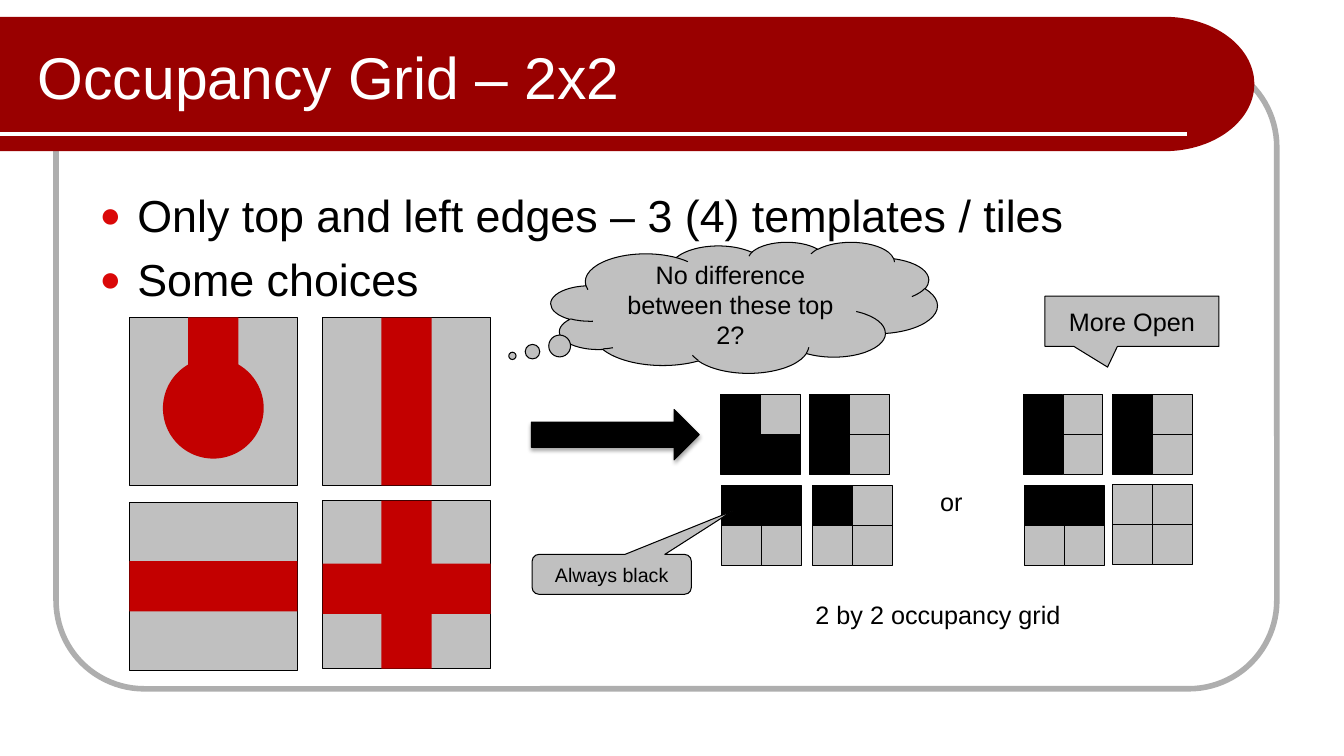
import math
from dataclasses import dataclass

import lxml.etree
import pptx
import pptx.dml.color
import pptx.enum.shapes
import pptx.enum.text
import pptx.oxml
import pptx.oxml.ns
import pptx.util

Preset = pptx.enum.shapes.MSO_SHAPE
Anchor = pptx.enum.text.MSO_ANCHOR
Align = pptx.enum.text.PP_ALIGN

WIDTH, HEIGHT = pptx.util.Inches(13.333), pptx.util.Inches(7.5)
COLUMNS, ROWS = 160, 90
BLACK, WHITE, GRAY, RED = "000000", "FFFFFF", "C0C0C0", "C30000"
BANNER_RED, FRAME_GRAY, BULLET_RED = "990000", "AEAEAE", "DA0808"
TILE, CORRIDOR, CELL = 20, 6, 4.75
DRAWING = 'xmlns:a="http://schemas.openxmlformats.org/drawingml/2006/main"'


@dataclass(frozen=True)
class Box:
    """A rectangle in grid columns and rows."""
    left: float
    top: float
    width: float
    height: float


@dataclass(frozen=True)
class Tile:
    left: float
    top: float
    openings: tuple[tuple[Preset, Box], ...]


@dataclass(frozen=True)
class Occupancy:
    """A 2 by 2 grid; cells run row by row, X marks a black one."""
    left: float
    top: float
    cells: str


@dataclass(frozen=True)
class Callout:
    preset: Preset
    box: Box
    adjustments: tuple[float, ...]
    text: str
    size: int


UPRIGHT = Box((TILE - CORRIDOR) / 2, 0, CORRIDOR, TILE)
TILES = (
    Tile(15.4, 37.8, ((Preset.RECTANGLE, Box(7, 0, CORRIDOR, 13)),
                      (Preset.OVAL, Box(4, 4.8, 12, 12)))),
    Tile(38.4, 37.8, ((Preset.RECTANGLE, UPRIGHT),)),
    Tile(15.4, 59.8, ((Preset.RECTANGLE, Box(0, 7, TILE, CORRIDOR)),)),
    Tile(38.4, 59.6, ((Preset.RECTANGLE, UPRIGHT),
                      (Preset.RECTANGLE, Box(0, 7.5, TILE, CORRIDOR)))),
)
OCCUPANCIES = (
    Occupancy(85.8, 47, "X.XX"),
    Occupancy(96.35, 47, "X.X."),
    Occupancy(85.9, 57.85, "XX.."),
    Occupancy(96.7, 57.85, "X..."),
    Occupancy(121.8, 47, "X.X."),
    Occupancy(132.45, 47, "X.X."),
    Occupancy(121.95, 57.85, "XX.."),
    Occupancy(132.45, 57.7, "...."),
)
CALLOUTS = (
    Callout(Preset.RECTANGULAR_CALLOUT, Box(124.4, 35.25, 20.7, 6),
            (-0.14, 0.91), "More Open", 18),
    Callout(Preset.ROUNDED_RECTANGULAR_CALLOUT, Box(63.35, 66, 18.95, 4.75),
            (0.76, -1.59, 0.17), "Always black", 14),
    Callout(Preset.CLOUD_CALLOUT, Box(65.6, 28.8, 46, 15.6),
            (-0.6, 0.37), "No difference between these top 2?", 18),
)


def column(number: float) -> int:
    return round(WIDTH * number / COLUMNS)


def row(number: float) -> int:
    return round(HEIGHT * number / ROWS)


def place(box: Box) -> tuple[int, int, int, int]:
    return column(box.left), row(box.top), column(box.width), row(box.height)


def color(value: str) -> pptx.dml.color.RGBColor:
    return pptx.dml.color.RGBColor.from_string(value)


def paint(shape, fill: str | None, line: str | None, width: float = 0.75) -> None:
    shape.shadow.inherit = False
    if fill:
        shape.fill.solid()
        shape.fill.fore_color.rgb = color(fill)
    else:
        shape.fill.background()
    if line:
        shape.line.color.rgb = color(line)
        shape.line.width = pptx.util.Pt(width)
    else:
        shape.line.fill.background()


def add_preset(slide, preset: Preset, box: Box, fill: str | None,
               line: str | None = None, width: float = 0.75):
    shape = slide.shapes.add_shape(preset, *place(box))
    paint(shape, fill, line, width)
    return shape


def add_run(paragraph, text: str, size: float, ink: str = BLACK) -> None:
    run = paragraph.add_run()
    run.text = text
    run.font.name = "Arial"
    run.font.size = pptx.util.Pt(size)
    run.font.color.rgb = color(ink)


def add_label(slide, box: Box, text: str, size: float, ink: str = BLACK,
              wrap: bool = True) -> None:
    frame = slide.shapes.add_textbox(*place(box)).text_frame
    frame.word_wrap = wrap
    frame.vertical_anchor = Anchor.MIDDLE
    add_run(frame.paragraphs[0], text, size, ink)


def add_banner(slide) -> None:
    """Frame, red band with a rounded right end, and the white rule."""
    border = add_preset(slide, Preset.ROUNDED_RECTANGLE,
                        Box(6.67, 7, 145.33, 75), None, FRAME_GRAY, 4)
    border.adjustments[0] = 0.14
    angles = [math.radians(degrees) for degrees in range(-90, 91, 3)]
    curve = [(column(138.63 + 10.7 * math.cos(angle)), row(10 + 8 * math.sin(angle)))
             for angle in angles]
    builder = slide.shapes.build_freeform(0, row(2))
    builder.add_line_segments(curve + [(0, row(18))], close=True)
    paint(builder.convert_to_shape(), BANNER_RED, None)
    rule = slide.shapes.add_connector(pptx.enum.shapes.MSO_CONNECTOR.STRAIGHT,
                                      0, row(16), column(141.33), row(16))
    rule.line.color.rgb = color(WHITE)
    rule.line.width = pptx.util.Pt(3)
    lxml.etree.SubElement(rule._element.spPr, pptx.oxml.ns.qn("a:effectLst"))


def add_bullets(slide, box: Box, lines: tuple[str, ...]) -> None:
    frame = slide.shapes.add_textbox(*place(box)).text_frame
    frame.word_wrap = True
    for index, text in enumerate(lines):
        paragraph = frame.add_paragraph() if index else frame.paragraphs[0]
        properties = paragraph._p.get_or_add_pPr()
        properties.set("marL", str(column(4.5)))
        properties.set("indent", str(-column(4.5)))
        if index:
            paragraph.space_before = pptx.util.Pt(7.2)
        for bullet in (f'<a:buClr {DRAWING}><a:srgbClr val="{BULLET_RED}"/></a:buClr>',
                       f'<a:buSzPct {DRAWING} val="80000"/>',
                       f'<a:buFont {DRAWING} typeface="Arial"/>',
                       f'<a:buChar {DRAWING} char="●"/>'):
            properties.append(pptx.oxml.parse_xml(bullet))
        add_run(paragraph, text, 32)


def add_tile(slide, tile: Tile) -> None:
    add_preset(slide, Preset.RECTANGLE, Box(tile.left, tile.top, TILE, TILE), GRAY, BLACK)
    for preset, opening in tile.openings:
        add_preset(slide, preset, Box(tile.left + opening.left, tile.top + opening.top,
                                      opening.width, opening.height), RED)


def add_occupancy(slide, occupancy: Occupancy) -> None:
    for index, mark in enumerate(occupancy.cells):
        down, across = divmod(index, 2)
        box = Box(occupancy.left + across * CELL, occupancy.top + down * CELL, CELL, CELL)
        add_preset(slide, Preset.RECTANGLE, box, BLACK if mark == "X" else GRAY, BLACK)


def add_arrow(slide) -> None:
    arrow = add_preset(slide, Preset.RIGHT_ARROW, Box(63.25, 48.75, 20, 6), BLACK, BLACK)
    effects = arrow._element.spPr.find(pptx.oxml.ns.qn("a:effectLst"))
    effects.append(pptx.oxml.parse_xml(
        f'<a:outerShdw {DRAWING} blurRad="{pptx.util.Pt(3.1)}" dist="{pptx.util.Pt(1.8)}" '
        'dir="5400000" rotWithShape="0"><a:srgbClr val="000000">'
        '<a:alpha val="35000"/></a:srgbClr></a:outerShdw>'))


def add_callout(slide, callout: Callout) -> None:
    shape = add_preset(slide, callout.preset, callout.box, GRAY, BLACK)
    for index, value in enumerate(callout.adjustments):
        shape.adjustments[index] = value
    shape.text_frame.word_wrap = True
    shape.text_frame.vertical_anchor = Anchor.MIDDLE
    paragraph = shape.text_frame.paragraphs[0]
    paragraph.alignment = Align.CENTER
    add_run(paragraph, callout.text, callout.size)


def main() -> None:
    presentation = pptx.Presentation()
    presentation.slide_width, presentation.slide_height = WIDTH, HEIGHT
    slide = presentation.slides.add_slide(presentation.slide_layouts[6])
    add_banner(slide)
    add_label(slide, Box(3.33, 3, 124.5, 12), "Occupancy Grid – 2x2", 42, WHITE)
    add_bullets(slide, Box(10.67, 21.8, 138.67, 57.2),
                ("Only top and left edges – 3 (4) templates / tiles", "Some choices"))
    for tile in TILES:
        add_tile(slide, tile)
    add_arrow(slide)
    for occupancy in OCCUPANCIES:
        add_occupancy(slide, occupancy)
    add_label(slide, Box(95.9, 70.8, 31.9, 4.8), "2 by 2 occupancy grid", 18, wrap=False)
    add_label(slide, Box(110.75, 57.25, 5.2, 4.8), "or", 18, wrap=False)
    for callout in CALLOUTS:
        add_callout(slide, callout)
    presentation.save("out.pptx")


if __name__ == "__main__":
    main()
